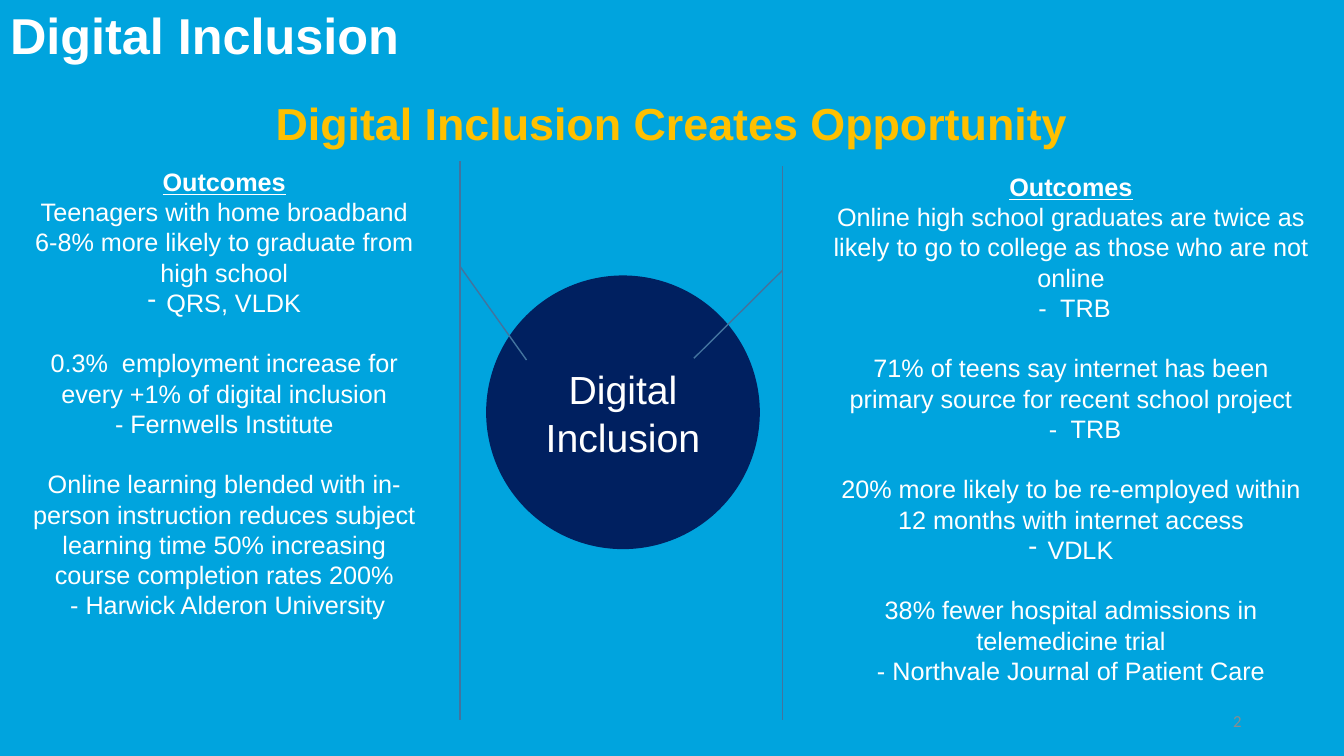
"""Build the Digital Inclusion slide with two outcome callouts around a circle."""
from lxml.etree import SubElement
from pptx import Presentation
from pptx.dml.color import RGBColor
from pptx.enum.shapes import MSO_SHAPE
from pptx.enum.text import MSO_ANCHOR, PP_ALIGN
from pptx.oxml.ns import qn
from pptx.util import Pt

COLORS = {
    "background": "00A4DE",
    "navy": "002060",
    "callout line": "43739E",
    "white": "FFFFFF",
    "gold": "FFC000",
    "grey": "8C8C8C",
}
BLANK_LINE = 21.6
BULLET_INDENT = 13.5


def color(name):
    return RGBColor.from_string(COLORS[name])


def format_paragraph(paragraph, size, color_name, alignment=PP_ALIGN.CENTER, bold=False, font_name="Arial"):
    paragraph.alignment = alignment
    for run in paragraph.runs:
        run.font.name = font_name
        run.font.size = Pt(size)
        run.font.bold = bold
        run.font.color.rgb = color(color_name)


presentation = Presentation()
presentation.slide_width = Pt(960)
presentation.slide_height = Pt(540)
slide = presentation.slides.add_slide(presentation.slide_layouts[5])
slide.background.fill.solid()
slide.background.fill.fore_color.rgb = color("background")

circle = slide.shapes.add_shape(MSO_SHAPE.OVAL, Pt(347.75), Pt(197.25), Pt(194.5), Pt(194.5))
circle.shadow.inherit = False
circle.fill.solid()
circle.fill.fore_color.rgb = color("navy")
circle.line.color.rgb = color("navy")
circle.line.width = Pt(1)
circle.text_frame.vertical_anchor = MSO_ANCHOR.MIDDLE
circle.text_frame.text = "Digital\nInclusion"
for paragraph in circle.text_frame.paragraphs:
    format_paragraph(paragraph, 28, "white")
    paragraph.line_spacing = Pt(34.2)

callouts = [
    {
        "box": (588.25, 118.8, 353.5, 395.3),
        "adjustments": (0.188, -0.083, 0.347, -0.262),
        "flipped": False,
        "outcomes": [
            (["Online high school graduates are twice as likely to go to college as those who are not online"],
             "-  TRB", False, 5),
            (["71% of teens say internet has been primary source for recent school project"],
             "-  TRB", False, 20),
            (["20% more likely to be re-employed within 12 months with internet access"],
             "VDLK", True, BULLET_INDENT),
            (["38% fewer hospital admissions in telemedicine trial"],
             "- Northvale Journal of Patient Care", False, 0),
        ],
    },
    {
        "box": (15.85, 115.2, 288.7, 398.9),
        "adjustments": (0.188, -0.083, 0.356, -0.248),
        "flipped": True,
        "outcomes": [
            (["Teenagers with home broadband", "6-8% more likely to graduate from high school"],
             "QRS, VLDK", True, BULLET_INDENT),
            (["0.3%  employment increase for every +1% of digital inclusion"],
             "- Fernwells Institute", False, 0),
            (["Online learning blended with in-person instruction reduces subject learning time 50% "
              "increasing course completion rates 200%"],
             "- Harwick Alderon University", False, 5),
        ],
    },
]

for callout in callouts:
    shape = slide.shapes.add_shape(MSO_SHAPE.LINE_CALLOUT_1_ACCENT_BAR, *map(Pt, callout["box"]))
    shape.shadow.inherit = False
    shape.fill.background()
    shape.line.color.rgb = color("callout line")
    shape.line.width = Pt(1)
    for index, value in enumerate(callout["adjustments"]):
        shape.adjustments[index] = value
    if callout["flipped"]:
        shape._element.spPr.find(qn("a:xfrm")).set("flipH", "1")

    text_frame = shape.text_frame
    text_frame.vertical_anchor = MSO_ANCHOR.TOP
    text_frame.text = "Outcomes"
    heading = text_frame.paragraphs[0]
    format_paragraph(heading, 18, "white", bold=True)
    heading.runs[0].font.underline = True
    heading.line_spacing = Pt(BLANK_LINE)

    for statements, source, bulleted, indent in callout["outcomes"]:
        for text in [*statements, source]:
            paragraph = text_frame.add_paragraph()
            paragraph.text = text
            format_paragraph(paragraph, 18, "white")
            paragraph.line_spacing = Pt(BLANK_LINE)
        properties = paragraph._p.get_or_add_pPr()
        properties.set("marL", str(Pt(indent)))
        if source != callout["outcomes"][-1][1]:
            paragraph.space_after = Pt(BLANK_LINE)
        if bulleted:
            properties.set("indent", str(-Pt(indent)))
            SubElement(properties, qn("a:buChar"), char="-")

subtitle = slide.shapes.add_textbox(Pt(148.3), Pt(64.8), Pt(663.1), Pt(46))
subtitle.text_frame.word_wrap = True
subtitle.text_frame.text = "Digital Inclusion Creates Opportunity"
format_paragraph(subtitle.text_frame.paragraphs[0], 32, "gold", bold=True)

title = slide.shapes.title
title.left, title.top, title.width, title.height = Pt(0), Pt(0), Pt(672), Pt(54)
title.text_frame.text = "Digital Inclusion"
title.text_frame.vertical_anchor = MSO_ANCHOR.MIDDLE
title.text_frame.paragraphs[0].line_spacing = 0.9
format_paragraph(title.text_frame.paragraphs[0], 36, "white", PP_ALIGN.LEFT, bold=True)

slide_number = slide.shapes.add_textbox(Pt(678), Pt(500.4), Pt(216), Pt(28.8))
slide_number.text_frame.word_wrap = True
slide_number.text_frame.vertical_anchor = MSO_ANCHOR.MIDDLE
slide_number.text_frame.text = "2"
format_paragraph(slide_number.text_frame.paragraphs[0], 12, "grey", PP_ALIGN.RIGHT, font_name="Calibri")

presentation.save("out.pptx")
